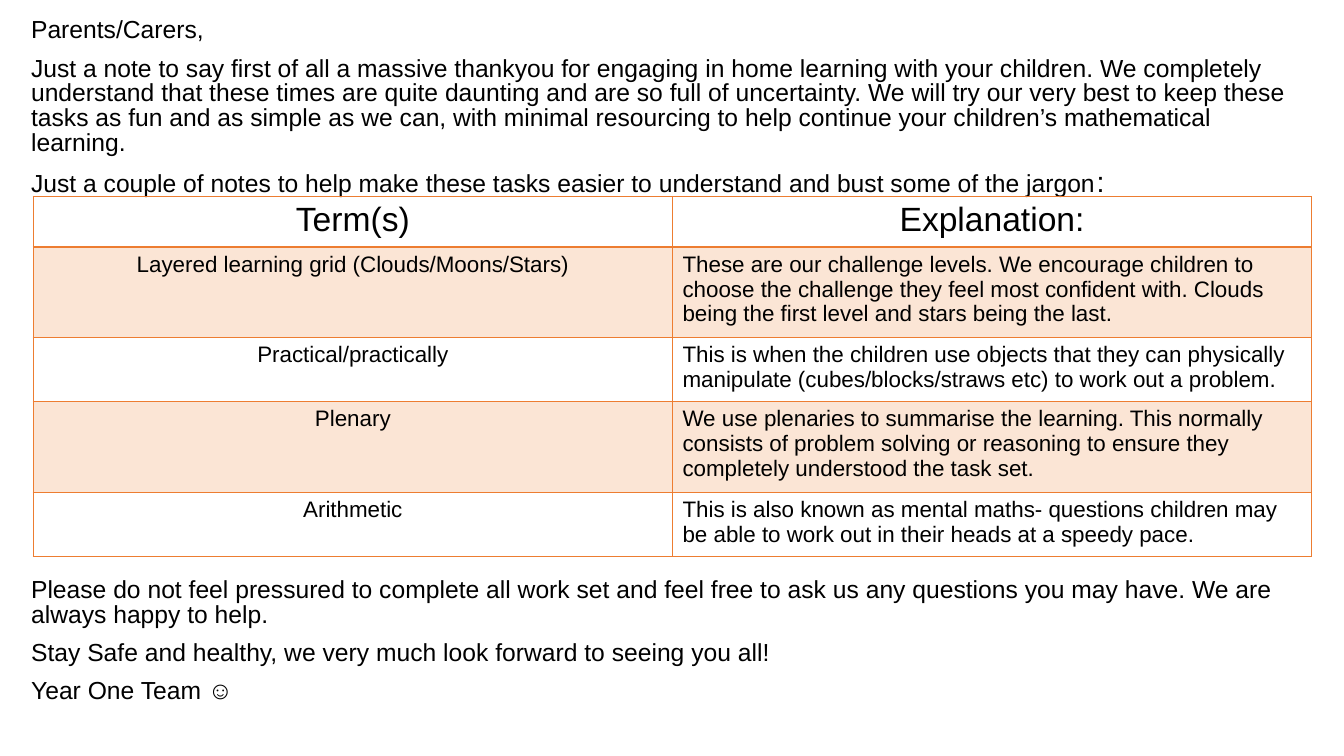
import dataclasses

import lxml.etree
import pptx
import pptx.dml.color
import pptx.enum.text
import pptx.oxml.ns
import pptx.slide
import pptx.table
import pptx.text.text
import pptx.util

PX = 9144  # EMU, 100 px to the inch
FONT = "Arial"
BLACK = "000000"
ORANGE = "ED7D31"
BODY_SIZE = 17.6
COLON_SIZE = 20.4
HEAD_SIZE = 24
CELL_SIZE = 16


@dataclasses.dataclass
class Note:
    top: int
    height: int
    lines: list[str]


@dataclasses.dataclass
class Row:
    term: str
    meaning: str
    height: int
    size: int = CELL_SIZE
    tinted: bool = False


INTRO = Note(14, 180, [
    "Parents/Carers,",
    "Just a note to say first of all a massive thankyou for engaging in home learning with "
    "your children. We completely understand that these times are quite daunting and are so "
    "full of uncertainty. We will try our very best to keep these tasks as fun and as simple "
    "as we can, with minimal resourcing to help continue your children’s mathematical learning.",
    "Just a couple of notes to help make these tasks easier to understand and bust some of "
    "the jargon",
])
CLOSING = Note(569, 167, [
    "Please do not feel pressured to complete all work set and feel free to ask us any "
    "questions you may have. We are always happy to help.",
    "Stay Safe and healthy, we very much look forward to seeing you all!",
    "Year One Team ☺",
])
ROWS = [
    Row("Term(s)", "Explanation:", 48, HEAD_SIZE),
    Row("Layered learning grid (Clouds/Moons/Stars)",
        "These are our challenge levels. We encourage children to choose the challenge they "
        "feel most confident with. Clouds being the first level and stars being the last.",
        84, tinted=True),
    Row("Practical/practically",
        "This is when the children use objects that they can physically manipulate "
        "(cubes/blocks/straws etc) to work out a problem.", 60),
    Row("Plenary",
        "We use plenaries to summarise the learning. This normally consists of problem "
        "solving or reasoning to ensure they completely understood the task set.",
        84, tinted=True),
    Row("Arithmetic",
        "This is also known as mental maths- questions children may be able to work out in "
        "their heads at a speedy pace.", 60),
]


def px(count: int) -> pptx.util.Emu:
    return pptx.util.Emu(count * PX)


def tint(code: str) -> pptx.dml.color.RGBColor:
    return pptx.dml.color.RGBColor.from_string(code)


def set_font(font: pptx.text.text.Font, size: float) -> None:
    font.name = FONT
    font.size = pptx.util.Pt(size)
    font.bold = False
    font.color.rgb = tint(BLACK)


def add_note(slide: pptx.slide.Slide, note: Note) -> pptx.text.text.TextFrame:
    box = slide.shapes.add_textbox(px(21), px(note.top), px(1291), px(note.height))
    frame = box.text_frame
    frame.word_wrap = True
    frame.text = "\n".join(note.lines)
    for para in frame.paragraphs:
        para.line_spacing = 0.84
        para.space_before = pptx.util.Pt(9.5)
        set_font(para.font, BODY_SIZE)
    return frame


def add_edges(cell: pptx.table._Cell, widths: dict[str, int]) -> None:
    """Put border lines, given in points by side, ahead of the cell's fill."""
    props = cell._tc.get_or_add_tcPr()
    for place, (side, width) in enumerate(widths.items()):
        line = lxml.etree.Element(pptx.oxml.ns.qn("a:ln" + side), w=str(pptx.util.Pt(width)))
        fill = lxml.etree.SubElement(line, pptx.oxml.ns.qn("a:solidFill"))
        lxml.etree.SubElement(fill, pptx.oxml.ns.qn("a:srgbClr"), val=ORANGE)
        props.insert(place, line)


def fill_cell(cell: pptx.table._Cell, tinted: bool) -> None:
    """Leave the cell clear, or lay a one-fifth opaque orange on it."""
    if not tinted:
        cell.fill.background()
        return
    cell.fill.solid()
    cell.fill.fore_color.rgb = tint(ORANGE)
    color = cell._tc.tcPr.find(".//" + pptx.oxml.ns.qn("a:srgbClr"))
    lxml.etree.SubElement(color, pptx.oxml.ns.qn("a:alpha"), val="20000")


def add_terms(slide: pptx.slide.Slide, rows: list[Row]) -> None:
    total = sum(row.height for row in rows)
    table = slide.shapes.add_table(len(rows), 2, px(33), px(195), px(1268), px(total)).table
    table.first_row = False
    table.horz_banding = False
    for index, row in enumerate(rows):
        table.rows[index].height = px(row.height)
        edges = {"L": 1, "R": 1, "T": 2 if index == 1 else 1, "B": 2 if index == 0 else 1}
        for column, text in enumerate((row.term, row.meaning)):
            cell = table.cell(index, column)
            cell.text = text
            para = cell.text_frame.paragraphs[0]
            set_font(para.font, row.size)
            if column == 0 or index == 0:
                para.alignment = pptx.enum.text.PP_ALIGN.CENTER
            fill_cell(cell, row.tinted)
            add_edges(cell, edges)


def main() -> None:
    deck = pptx.Presentation()
    deck.slide_width, deck.slide_height = px(1333), px(750)
    slide = deck.slides.add_slide(deck.slide_layouts[6])
    intro = add_note(slide, INTRO)
    colon = intro.paragraphs[-1].add_run()
    colon.text = ":"
    colon.font.size = pptx.util.Pt(COLON_SIZE)
    add_note(slide, CLOSING)
    add_terms(slide, ROWS)
    deck.save("out.pptx")


if __name__ == "__main__":
    main()
